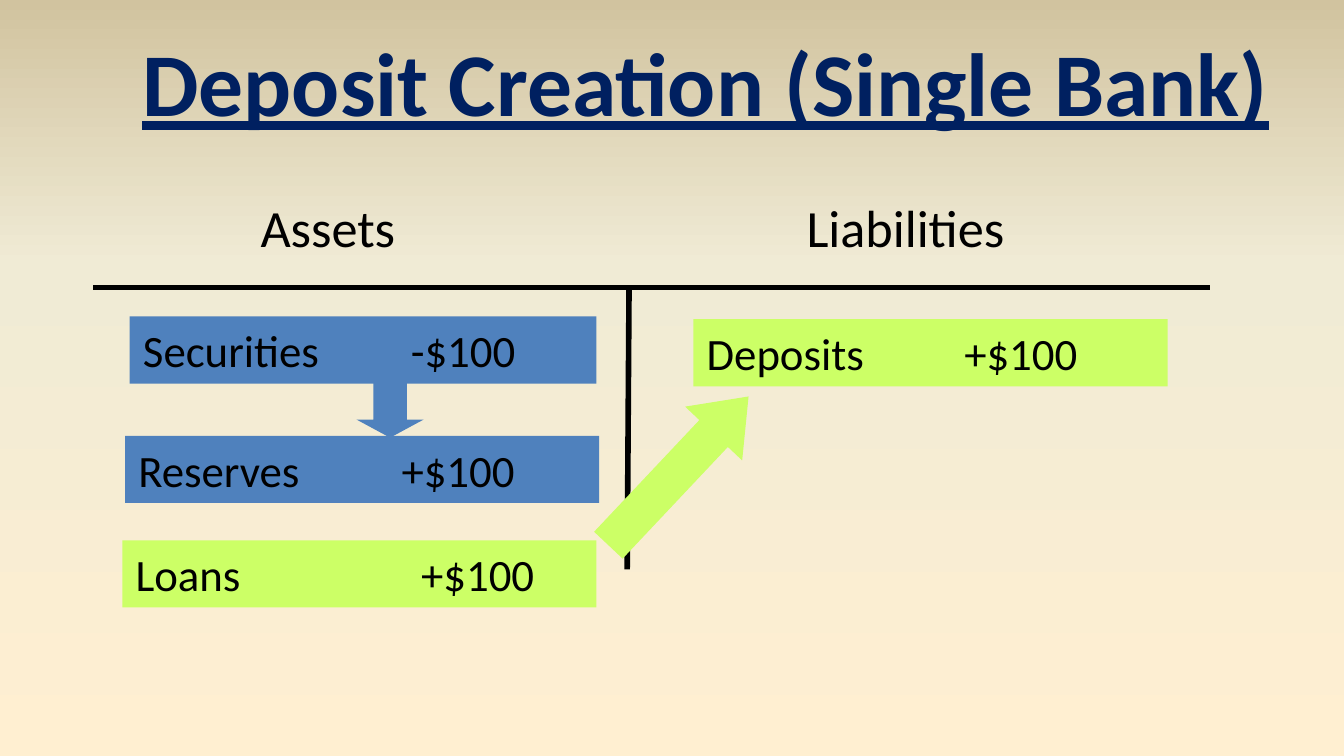
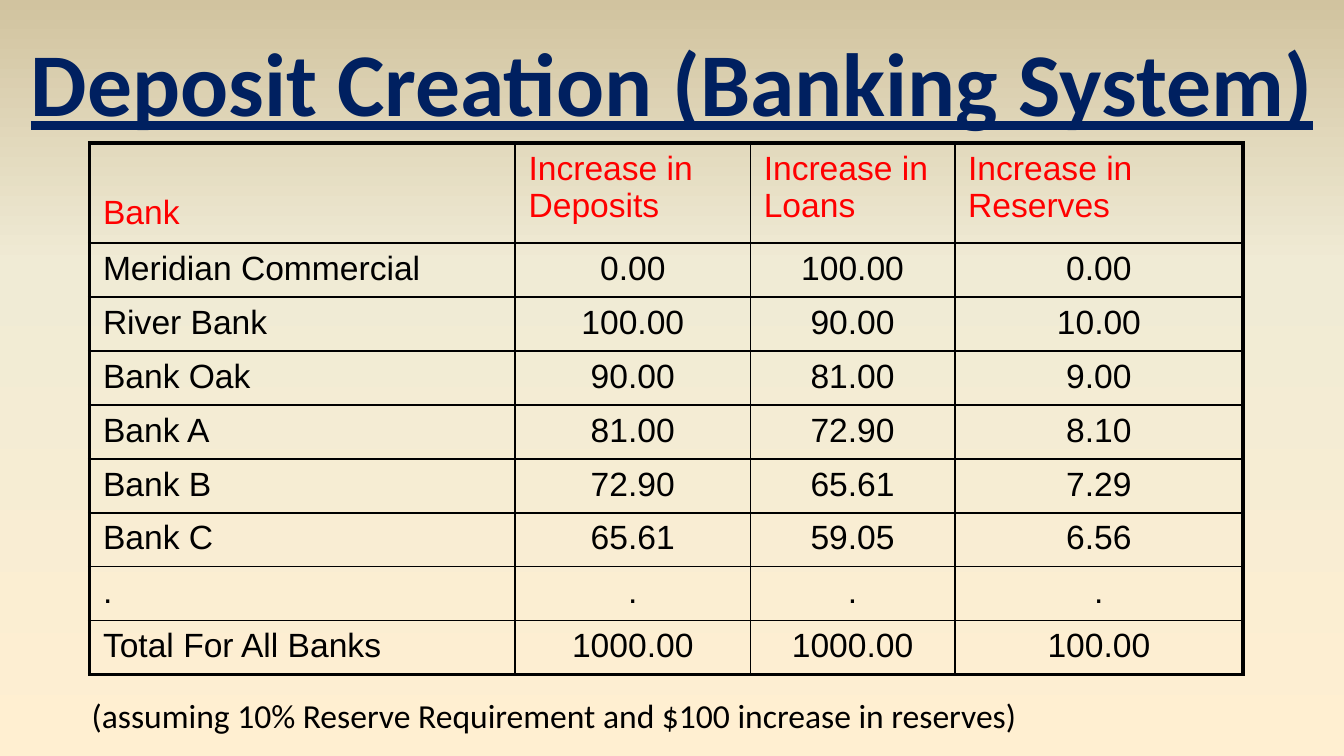
import copy

import lxml.etree
import pptx
import pptx.dml.color
import pptx.enum.shapes
import pptx.enum.text
import pptx.oxml
import pptx.oxml.ns
import pptx.util

Pt = pptx.util.Pt
qn = pptx.oxml.ns.qn
Shape = pptx.enum.shapes.MSO_SHAPE
Align = pptx.enum.text.PP_ALIGN
Anchor = pptx.enum.text.MSO_ANCHOR

NAVY, BLACK, RED = "002060", "000000", "FF0000"
BLUE, LIME = "4F81BD", "CCFF66"
BACKGROUND = [(0, "FFEFD1"), (0.65, "F0EBD5"), (1, "D1C39F")]


def color(value):
    return pptx.dml.color.RGBColor.from_string(value)


def write(paragraph, text, size, value=BLACK, font="Calibri"):
    run = paragraph.add_run()
    run.text = text
    run.font.name = font
    run.font.size = Pt(size)
    run.font.color.rgb = color(value)
    return run


presentation = pptx.Presentation()
presentation.slide_width = Pt(720)
presentation.slide_height = Pt(405)

master = presentation.slide_master
fill = master.background.fill
fill.gradient()
fill.gradient_angle = 90
stop_list = master.element.find(".//" + qn("a:gsLst"))
stop_list.append(copy.deepcopy(stop_list[-1]))
for stop, (position, value) in zip(fill.gradient_stops, BACKGROUND):
    stop.position = position
    stop.color.rgb = color(value)

slides = []
for text, left, width in [
    ("Deposit Creation (Single Bank)", 66, 624),
    ("Deposit Creation (Banking System)", 6, 708),
]:
    slide = presentation.slides.add_slide(presentation.slide_layouts.get_by_name("Title Only"))
    title = slide.shapes.title
    title.left, title.top, title.width, title.height = Pt(left), Pt(11), Pt(width), Pt(65.5)
    title.text_frame.word_wrap = False
    title.text_frame.auto_size = pptx.enum.text.MSO_AUTO_SIZE.NONE
    title.text_frame.vertical_anchor = Anchor.TOP
    paragraph = title.text_frame.paragraphs[0]
    paragraph.alignment = Align.CENTER
    run = write(paragraph, text, 48, NAVY)
    run.font.bold = True
    run.font.underline = True
    slides.append(slide)
single_bank, banking_system = slides

for start_x, start_y, end_x, end_y in [(50, 154, 648, 154), (336, 305, 337, 154)]:
    line = single_bank.shapes.add_connector(
        pptx.enum.shapes.MSO_CONNECTOR.STRAIGHT, Pt(start_x), Pt(start_y), Pt(end_x), Pt(end_y)
    )
    line.line.color.rgb = color(BLACK)
    line.line.width = Pt(3)
    lxml.etree.SubElement(line.element.spPr, qn("a:effectLst"))

for slide, text, left, top, width, height, size in [
    (single_bank, "Assets", 132.5, 101, 135, 41, 28),
    (single_bank, "Liabilities", 425, 101, 135, 41, 28),
    (banking_system, "(assuming 10% Reserve Requirement and $100 increase in reserves)", 42, 371, 630, 30, 18),
]:
    box = slide.shapes.add_textbox(Pt(left), Pt(top), Pt(width), Pt(height))
    box.text_frame.word_wrap = True
    write(box.text_frame.paragraphs[0], text, size)
    if slide is banking_system:
        box.text_frame.paragraphs[0].line_spacing = 0.9

entries = {}
for label, amount, left, top, width, tab, value in [
    ("Securities", "-$100", 69.5, 169.5, 250, 143.5, BLUE),
    ("Reserves", "+$100", 67, 233.5, 254, 141, BLUE),
    ("Loans", "+$100", 65.5, 289.5, 254, 153, LIME),
    ("Deposits", "+$100", 371.5, 171, 254, 138, LIME),
]:
    entry = single_bank.shapes.add_shape(Shape.RECTANGLE, Pt(left), Pt(top), Pt(width), Pt(36))
    entry.shadow.inherit = False
    entry.fill.solid()
    entry.fill.fore_color.rgb = color(value)
    entry.line.fill.background()
    entry.text_frame.vertical_anchor = Anchor.TOP
    paragraph = entry.text_frame.paragraphs[0]
    paragraph.alignment = Align.LEFT
    write(paragraph, label + "\t" + amount, 24)
    tabs = lxml.etree.SubElement(paragraph._p.get_or_add_pPr(), qn("a:tabLst"))
    lxml.etree.SubElement(tabs, qn("a:tab"), pos=str(Pt(tab)), algn="l")
    entries[label] = entry

arrows = []
for preset, left, top, width, height, head, rotation, value in [
    (Shape.DOWN_ARROW, 191, 195, 36, 39.5, 0.27, 0, BLUE),
    (Shape.UP_ARROW, 342.5, 197.5, 42, 109.5, 0.65, 43.3, LIME),
]:
    arrow = single_bank.shapes.add_shape(preset, Pt(left), Pt(top), Pt(width), Pt(height))
    arrow.shadow.inherit = False
    arrow.fill.solid()
    arrow.fill.fore_color.rgb = color(value)
    arrow.line.fill.background()
    arrow.adjustments[0] = 0.5
    arrow.adjustments[1] = head
    arrow.rotation = rotation
    arrows.append(arrow)
single_bank.shapes.add_group_shape([arrows[0], entries["Reserves"]])

rows = [
    ("Bank", "Increase in Deposits", "Increase in Loans", "Increase in Reserves"),
    ("Meridian Commercial", "0.00", "100.00", "0.00"),
    ("River Bank", "100.00", "90.00", "10.00"),
    ("Bank Oak", "90.00", "81.00", "9.00"),
    ("Bank A", "81.00", "72.90", "8.10"),
    ("Bank B", "72.90", "65.61", "7.29"),
    ("Bank C", "65.61", "59.05", "6.56"),
    (".", ".", ".", "."),
    ("Total For All Banks", "1000.00", "1000.00", "100.00"),
]
column_widths = [228, 126, 109.5, 154.5]
last_row, last_column = len(rows) - 1, len(column_widths) - 1
table = banking_system.shapes.add_table(
    len(rows), len(column_widths), Pt(48), Pt(76.5), Pt(sum(column_widths)), Pt(285)
).table
table.first_row = False
table.horz_banding = False
for column, width in zip(table.columns, column_widths):
    column.width = Pt(width)

for row_index, row in enumerate(rows):
    table.rows[row_index].height = Pt(28.9 if row_index else 53.8)
    for column_index, text in enumerate(row):
        cell = table.cell(row_index, column_index)
        paragraph = cell.text_frame.paragraphs[0]
        write(paragraph, text, 18, BLACK if row_index else RED, "Arial")
        if row_index and column_index:
            paragraph.alignment = Align.CENTER
        if text == "Bank":
            cell.vertical_anchor = Anchor.BOTTOM
            cell.margin_bottom = Pt(6)
        properties = cell._tc.get_or_add_tcPr()
        for side, outer in [
            ("L", column_index == 0),
            ("R", column_index == last_column),
            ("T", row_index == 0),
            ("B", row_index == last_row),
        ]:
            border = lxml.etree.SubElement(properties, qn("a:ln" + side), w=str(Pt(2.25 if outer else 1)))
            solid = lxml.etree.SubElement(border, qn("a:solidFill"))
            lxml.etree.SubElement(solid, qn("a:srgbClr"), val=BLACK)
        cell.fill.background()

presentation.save("out.pptx")
